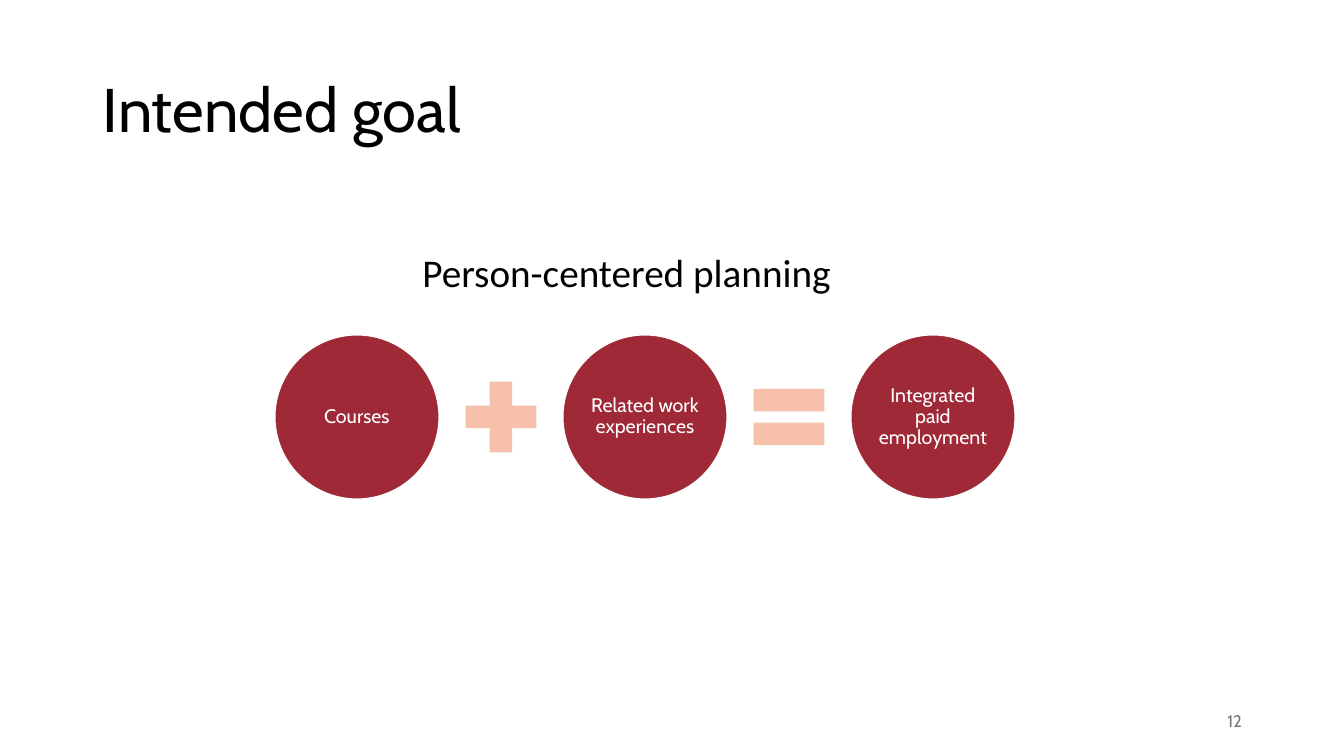
import pptx
import pptx.dml.color
import pptx.util
from pptx.enum.shapes import MSO_SHAPE
from pptx.enum.text import MSO_ANCHOR, PP_ALIGN

EMU_PER_PX = 914400 / 100.8

CIRCLE_SIZE = 165
OPERATOR_SIZE = 96
FIRST_CENTER_X = 357
CENTER_Y = 417
STEP = 288  # between the centers of neighbouring circles

STAGES = ["Courses", "Related work experiences", "Integrated paid employment"]
OPERATORS = [MSO_SHAPE.MATH_PLUS, MSO_SHAPE.MATH_EQUAL]


def px(length):
    return pptx.util.Emu(round(length * EMU_PER_PX))


def color(hex_code):
    return pptx.dml.color.RGBColor.from_string(hex_code)


def write(shape, text, size, font, hex_code, align, anchor, spacing=0.9, margin=None):
    frame = shape.text_frame
    frame.word_wrap = True
    frame.vertical_anchor = anchor
    if margin is not None:
        frame.margin_left = frame.margin_right = px(margin)
        frame.margin_top = frame.margin_bottom = px(margin)
    paragraph = frame.paragraphs[0]
    paragraph.alignment = align
    paragraph.line_spacing = spacing
    run = paragraph.add_run()
    run.text = text
    run.font.size = pptx.util.Pt(size)
    run.font.name = font
    run.font.color.rgb = color(hex_code)


def add_label(slide, box, *style, **options):
    label = slide.shapes.add_textbox(*map(px, box))
    write(label, *style, **options)


def add_centered_shape(slide, preset, center_x, size, fill):
    """Add a square-framed shape centered on the equation's axis."""
    shape = slide.shapes.add_shape(
        preset, px(center_x - size / 2), px(CENTER_Y - size / 2), px(size), px(size))
    shape.shadow.inherit = False
    shape.fill.solid()
    shape.fill.fore_color.rgb = color(fill)
    shape.line.fill.background()
    return shape


def add_stage(slide, center_x, text):
    circle = add_centered_shape(slide, MSO_SHAPE.OVAL, center_x, CIRCLE_SIZE, "9F2936")
    circle.line.color.rgb = color("FFFFFF")
    circle.line.width = pptx.util.Pt(1.5)
    write(circle, text, 14, "Cabin", "FFFFFF", PP_ALIGN.CENTER, MSO_ANCHOR.MIDDLE,
          margin=2)


def add_equation(slide):
    for index, text in enumerate(STAGES):
        add_stage(slide, FIRST_CENTER_X + index * STEP, text)
    for index, preset in enumerate(OPERATORS):
        center_x = FIRST_CENTER_X + (index + 0.5) * STEP
        add_centered_shape(slide, preset, center_x, OPERATOR_SIZE, "F6C0AB")


def main():
    deck = pptx.Presentation()
    deck.slide_width, deck.slide_height = px(1344), px(756)
    slide = deck.slides.add_slide(deck.slide_layouts[6])

    add_label(slide, (93, 40, 1159, 146), "Intended goal", 44, "Cabin", "000000",
              PP_ALIGN.LEFT, MSO_ANCHOR.MIDDLE)
    add_label(slide, (93, 249, 1067, 60), "Person-centered planning", 28, "Calibri",
              "000000", PP_ALIGN.CENTER, MSO_ANCHOR.TOP)
    add_equation(slide)
    add_label(slide, (950, 701, 302, 40), "12", 12, "Cabin", "797979",
              PP_ALIGN.RIGHT, MSO_ANCHOR.MIDDLE, spacing=1.0)

    deck.save("out.pptx")


if __name__ == "__main__":
    main()
